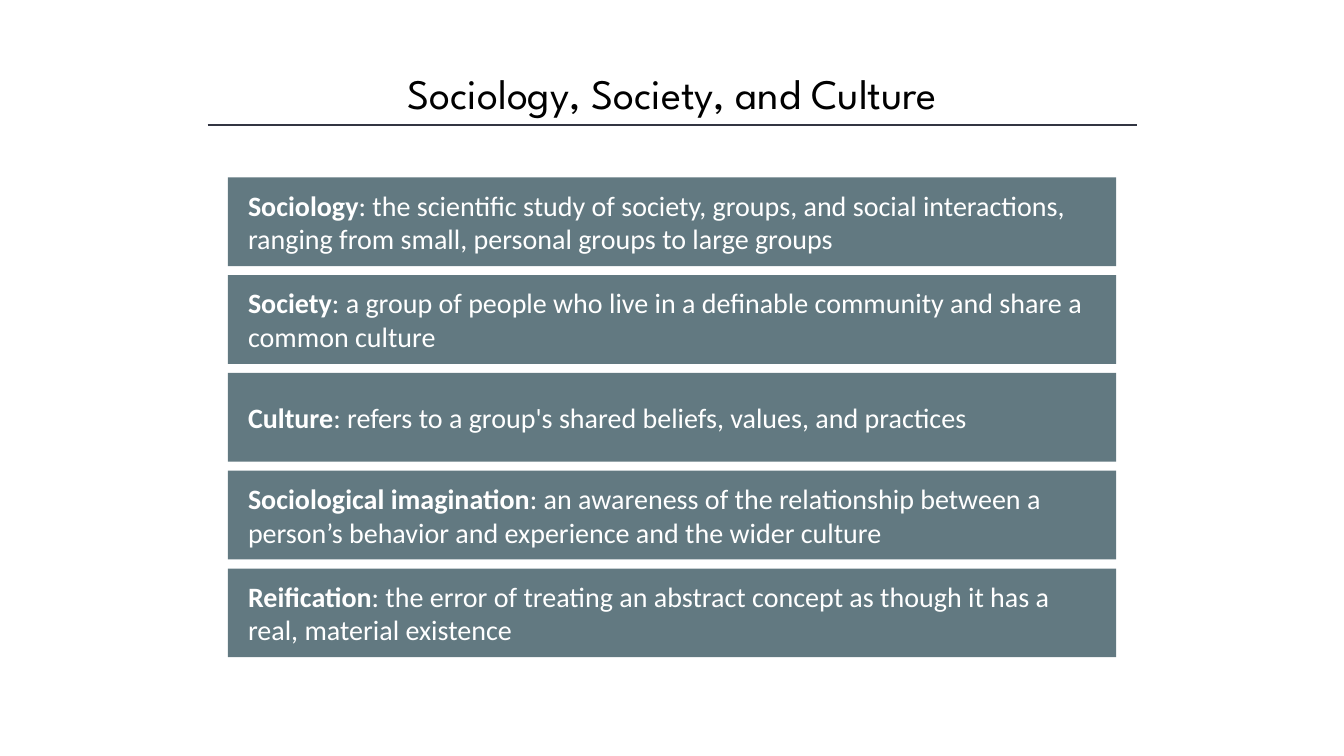
from lxml.etree import SubElement
from pptx import Presentation
from pptx.dml.color import RGBColor
from pptx.enum.shapes import MSO_CONNECTOR, MSO_SHAPE
from pptx.enum.text import MSO_ANCHOR, PP_ALIGN
from pptx.oxml.ns import qn
from pptx.util import Inches, Pt

BLACK = RGBColor(0x00, 0x00, 0x00)
WHITE = RGBColor(0xFF, 0xFF, 0xFF)
SLATE = RGBColor(0x62, 0x79, 0x81)
RULE = RGBColor(0x32, 0x35, 0x42)

DEFINITIONS = [
    ("Sociology", ": the scientific study of society, groups, and social interactions, "
                  "ranging from small, personal groups to large groups"),
    ("Society", ": a group of people who live in a definable community and share "
                "a common culture"),
    ("Culture", ": refers to a group's shared beliefs, values, and practices"),
    ("Sociological imagination", ": an awareness of the relationship between a person’s "
                                 "behavior and experience and the wider culture"),
    ("Reification", ": the error of treating an abstract concept as though it has "
                    "a real, material existence"),
]


def add_span(para, text, font, size, color, bold=False):
    span = para.add_run()
    span.text = text
    span.font.name = font
    span.font.size = Pt(size)
    span.font.bold = bold
    span.font.color.rgb = color


def add_heading(page, text, left, top, width, height):
    box = page.shapes.add_textbox(Inches(left), Inches(top), Inches(width), Inches(height))
    box.text_frame.word_wrap = True
    para = box.text_frame.paragraphs[0]
    para.alignment = PP_ALIGN.CENTER
    add_span(para, text, "League Spartan", 30, BLACK)

    inset = 0.39
    rule_y = Inches(top + height + 0.01)
    rule = page.shapes.add_connector(
        MSO_CONNECTOR.STRAIGHT,
        Inches(left + inset), rule_y, Inches(left + width - inset), rule_y)
    rule.line.color.rgb = RULE
    rule.line.width = Pt(1)
    SubElement(rule._element.spPr, qn("a:effectLst"))


def add_definition(page, term, meaning, left, top, width, height):
    bar = page.shapes.add_shape(
        MSO_SHAPE.RECTANGLE, Inches(left), Inches(top), Inches(width), Inches(height))
    bar.shadow.inherit = False
    bar.fill.solid()
    bar.fill.fore_color.rgb = SLATE
    bar.line.fill.background()
    frame = bar.text_frame
    frame.word_wrap = True
    frame.vertical_anchor = MSO_ANCHOR.MIDDLE
    frame.margin_left = Inches(0.2)
    frame.margin_right = Inches(0.27)
    para = frame.paragraphs[0]
    para.alignment = PP_ALIGN.LEFT
    add_span(para, term, "Calibri", 20, WHITE, bold=True)
    add_span(para, meaning, "Calibri", 20, WHITE)


def add_definitions(page, left, top, width, height, gap):
    bar_height = (height - gap * (len(DEFINITIONS) - 1)) / len(DEFINITIONS)
    for index, (term, meaning) in enumerate(DEFINITIONS):
        bar_top = top + index * (bar_height + gap)
        add_definition(page, term, meaning, left, bar_top, width, bar_height)


def main():
    deck = Presentation()
    deck.slide_width = Inches(13.33)
    deck.slide_height = Inches(7.5)
    page = deck.slides.add_slide(deck.slide_layouts[6])
    add_heading(page, "Sociology, Society, and Culture", 1.67, 0.62, 10, 0.61)
    add_definitions(page, 2.26, 1.76, 8.81, 4.76, 0.09)
    deck.save("out.pptx")


if __name__ == "__main__":
    main()
